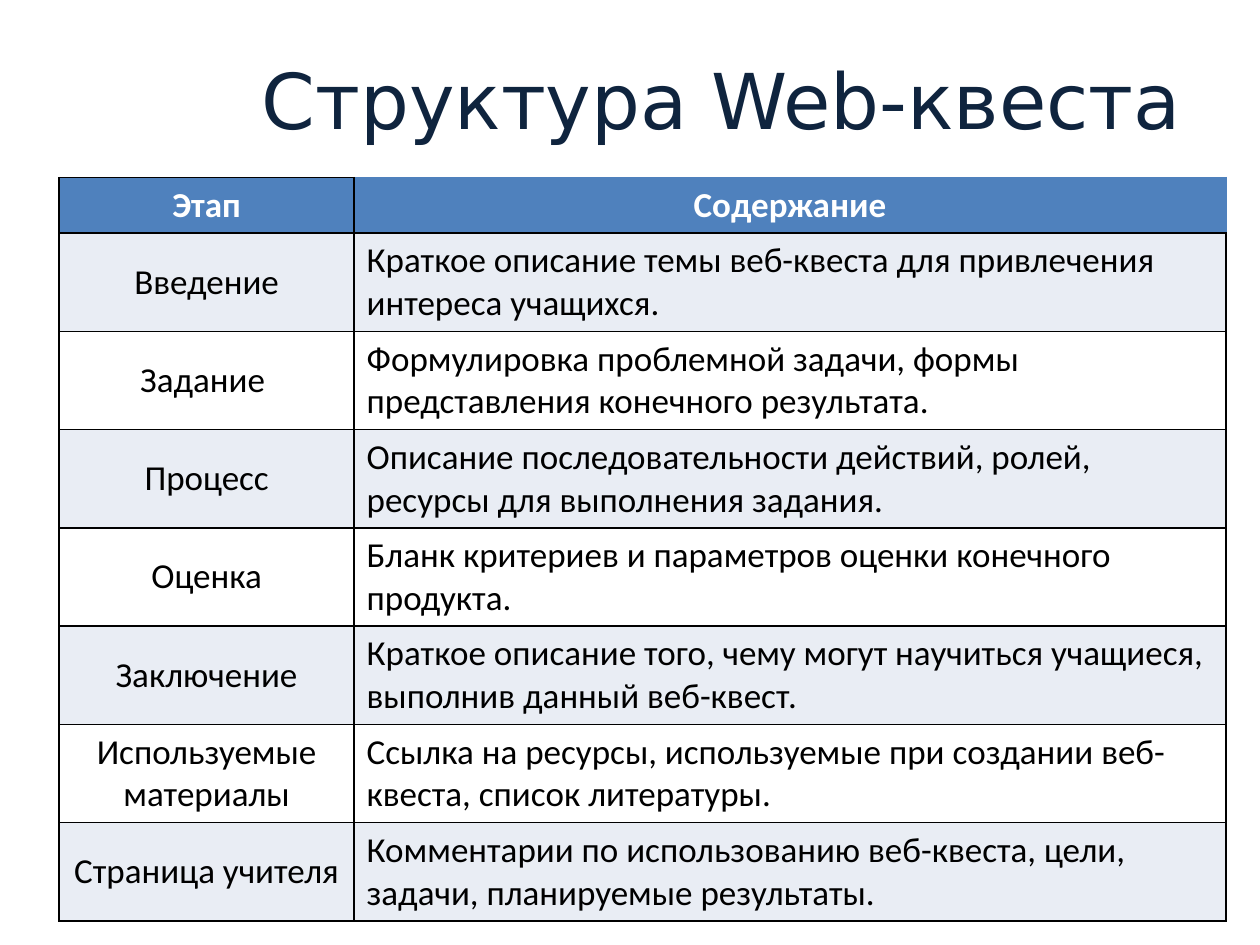
from lxml.etree import SubElement
from pptx import Presentation
from pptx.dml.color import RGBColor
from pptx.enum.text import MSO_ANCHOR, PP_ALIGN
from pptx.oxml.ns import qn
from pptx.util import Inches, Pt

COLORS = {
    "title": "0F243E",
    "header": "4F81BD",
    "band": "E9EDF4",
    "white": "FFFFFF",
    "black": "000000",
}
ROWS = [
    ("Этап", "Содержание"),
    ("Введение", "Краткое описание темы веб-квеста для привлечения интереса учащихся."),
    ("Задание ", "Формулировка проблемной задачи, формы представления конечного результата."),
    ("Процесс", "Описание последовательности действий, ролей, ресурсы для выполнения задания."),
    ("Оценка", "Бланк критериев и параметров оценки конечного продукта."),
    ("Заключение", "Краткое описание того, чему могут научиться учащиеся, выполнив данный веб-квест."),
    ("Используемые материалы", "Ссылка на ресурсы, используемые при создании веб-квеста, список литературы."),
    ("Страница учителя", "Комментарии по использованию веб-квеста, цели, задачи, планируемые результаты."),
]


def write(tf, text, align, color, **font):
    p = tf.paragraphs[0]
    p.alignment = align
    r = p.add_run()
    r.text = text
    r.font.color.rgb = RGBColor.from_string(COLORS[color])
    for name, value in font.items():
        setattr(r.font, name, value)


def set_borders(cell, colors):
    """Draw 1 pt borders; must run before the cell's fill is set."""
    tc_pr = cell._tc.get_or_add_tcPr()
    for side, color in colors.items():
        ln = SubElement(tc_pr, qn(f"a:ln{side}"), w=str(Pt(1)))
        fill = SubElement(ln, qn("a:solidFill"))
        SubElement(fill, qn("a:srgbClr"), val=COLORS[color])


prs = Presentation()
prs.slide_width, prs.slide_height = Inches(10), Inches(7.5)
s = prs.slides.add_slide(prs.slide_layouts[6])

title = s.shapes.add_textbox(Inches(1.23), Inches(0.16), Inches(9), Inches(1.25))
tf = title.text_frame
tf.word_wrap = True
tf.vertical_anchor = MSO_ANCHOR.MIDDLE
write(tf, "Структура Web-квеста", PP_ALIGN.CENTER, "title",
      name="DejaVu Sans", size=Pt(44))

table = s.shapes.add_table(len(ROWS), 2, Inches(0.47), Inches(1.41),
                           Inches(9.26), Inches(5.9)).table
for column, width in zip(table.columns, (2.34, 6.92)):
    column.width = Inches(width)

for i, texts in enumerate(ROWS):
    header = i == 0
    table.rows[i].height = Inches(0.44 if header else 0.78)
    fill = "header" if header else "band" if i % 2 else "white"
    for j, text in enumerate(texts):
        cell = table.cell(i, j)
        borders = dict.fromkeys("LRTB", "black")
        if header and j == 1:
            borders.update(R="header", T="header")
        set_borders(cell, borders)
        cell.fill.solid()
        cell.fill.fore_color.rgb = RGBColor.from_string(COLORS[fill])
        if j == 0 and not header:
            cell.vertical_anchor = MSO_ANCHOR.MIDDLE
        write(cell.text_frame, text,
              PP_ALIGN.CENTER if header or j == 0 else PP_ALIGN.LEFT,
              "white" if header else "black",
              name="Calibri", size=Pt(20), bold=header)

prs.save("out.pptx")
